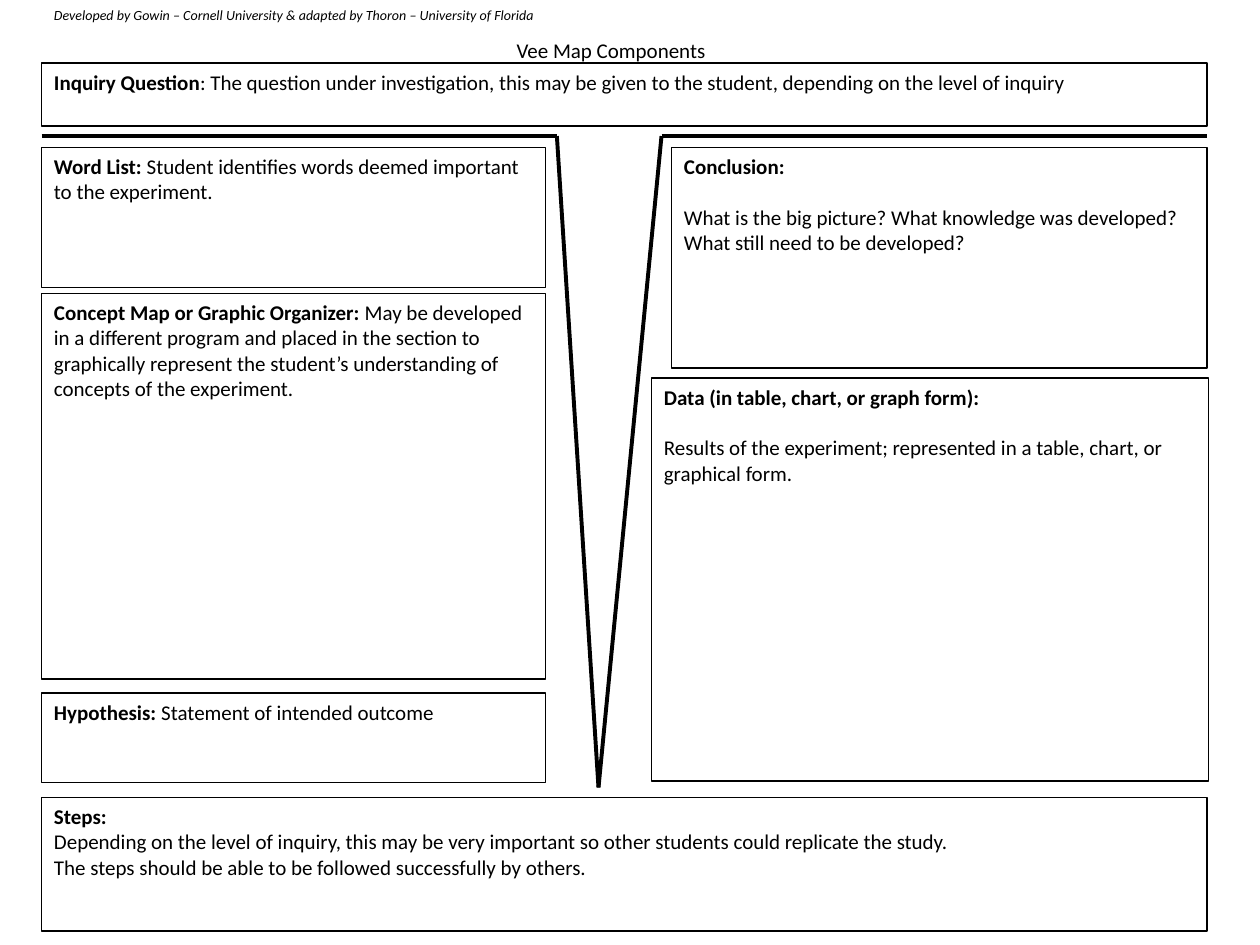
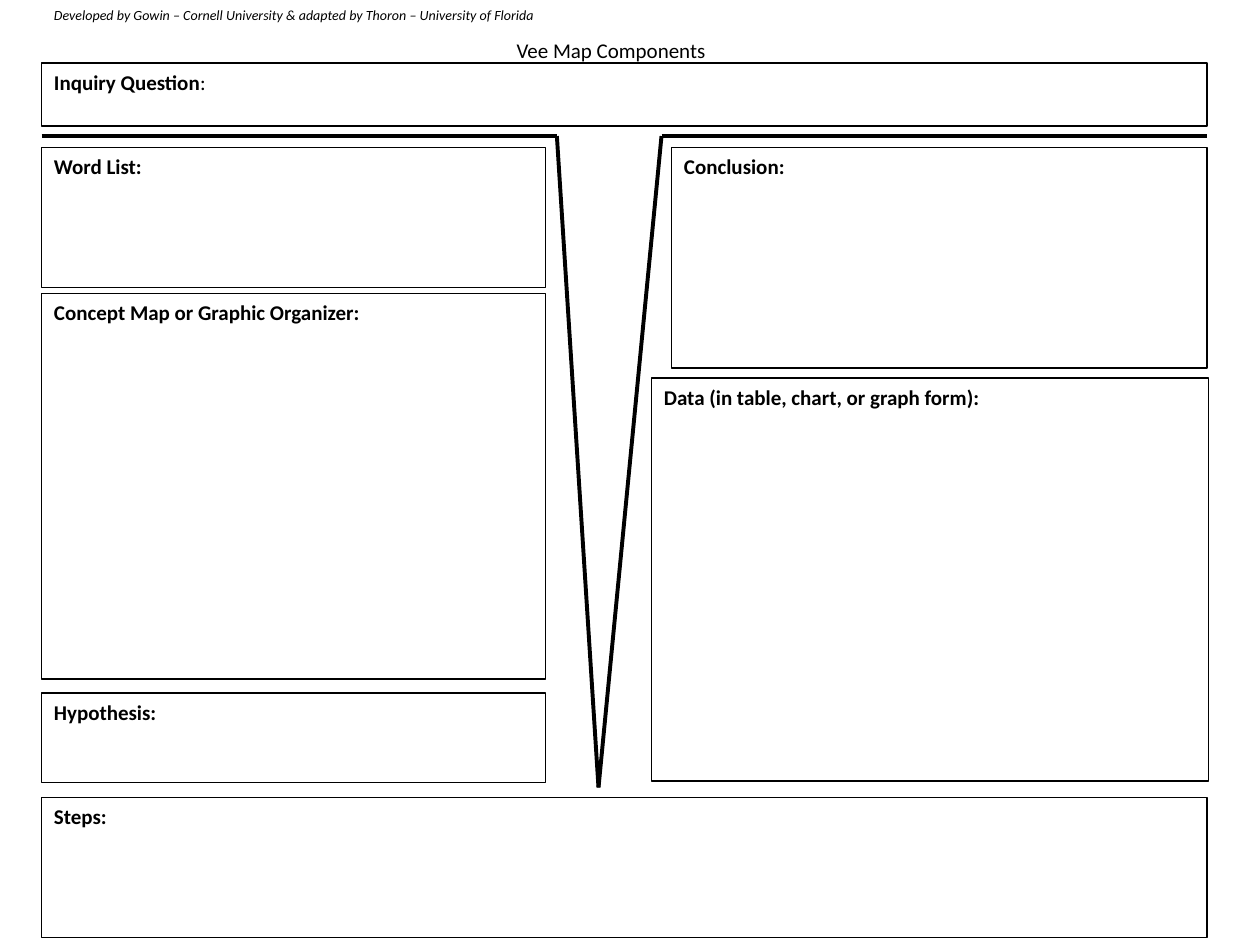
from dataclasses import dataclass
from itertools import pairwise

from lxml.etree import SubElement
from pptx import Presentation
from pptx.dml.color import RGBColor
from pptx.enum.shapes import MSO_CONNECTOR, MSO_SHAPE
from pptx.enum.text import MSO_ANCHOR, MSO_AUTO_SIZE, PP_ALIGN
from pptx.oxml.ns import qn
from pptx.util import Inches, Pt


@dataclass(frozen=True)
class Theme:
    font: str = "Calibri"
    ink: RGBColor = RGBColor(0, 0, 0)
    body: float = 12
    credit: float = 8
    gap: float = 14.6  # one line of body text
    border: float = 0.75
    vee: float = 2.25


THEME = Theme()
LEFT, RIGHT = 0.33, 9.58
TOP = 1.17
FULL = RIGHT - LEFT
COLUMN = 4

TITLE = "Vee Map Components"
CREDIT = ("Developed by Gowin – Cornell University & adapted by "
          "Thoron – University of Florida")

# The vee, from the left edge down to the tip and out to the right edge
VEE = [(LEFT, 1.08), (4.42, 1.08), (4.75, 6.25), (5.25, 1.08), (RIGHT, 1.08)]

# Panel: heading, rest of the heading line, (left, top, width, height)
PANELS = {
    "question": ("Inquiry Question", ":", (LEFT, 0.5, FULL, 0.5)),
    "words": ("Word List:", "", (LEFT, TOP, COLUMN, 1.11)),
    "concepts": ("Concept Map or Graphic Organizer:", "",
                 (LEFT, 2.33, COLUMN, 3.06)),
    "hypothesis": ("Hypothesis:", "", (LEFT, 5.5, COLUMN, 0.71)),
    "steps": ("Steps:", "", (LEFT, 6.33, FULL, 1.06)),
    "data": ("Data (in table, chart, or graph form):", "",
             (5.17, 3, 4.42, 3.2)),
    "conclusion": ("Conclusion:", "", (5.33, TOP, 4.25, 1.75)),
}

# Guidance that continues the heading line
INLINE = {
    "question": " The question under investigation, this may be given to the "
                "student, depending on the level of inquiry",
    "words": " Student identifies words deemed important to the experiment.",
    "concepts": " May be developed in a different program and placed in the "
                "section to graphically represent the student’s understanding "
                "of concepts of the experiment.",
    "hypothesis": " Statement of intended outcome",
}

# Guidance below the heading: space before it, then its paragraphs
BELOW = {
    "steps": (0, ["Depending on the level of inquiry, this may be very "
                  "important so other students could replicate the study.",
                  "The steps should be able to be followed successfully "
                  "by others."]),
    "data": (THEME.gap, ["Results of the experiment; represented in a table, "
                         "chart, or graphical form."]),
    "conclusion": (THEME.gap, ["What is the big picture? What knowledge was "
                               "developed? What still need to be developed?"]),
}


def add_run(p, text, size=THEME.body, bold=False, italic=False):
    r = p.add_run()
    r.text = text
    r.font.name, r.font.size = THEME.font, Pt(size)
    r.font.bold, r.font.italic = bold, italic
    r.font.color.rgb = THEME.ink


def prepare_text(sp):
    """Set up a top-left text frame and return its first paragraph."""
    tf = sp.text_frame
    tf.word_wrap = True
    tf.auto_size = MSO_AUTO_SIZE.NONE
    tf.vertical_anchor = MSO_ANCHOR.TOP
    p = tf.paragraphs[0]
    p.alignment = PP_ALIGN.LEFT
    return p


def add_title(slide):
    sp = slide.shapes.title
    sp.left, sp.top = Inches(4), Inches(0.25)
    sp.width, sp.height = Inches(2), Inches(0.3)
    add_run(prepare_text(sp), TITLE)


def add_credit(slide):
    sp = slide.shapes.add_textbox(Inches(LEFT), 0, Inches(4.25), Inches(0.24))
    add_run(prepare_text(sp), CREDIT, THEME.credit, italic=True)


def add_line(slide, start, end):
    points = [Inches(v) for v in (*start, *end)]
    line = slide.shapes.add_connector(MSO_CONNECTOR.STRAIGHT, *points)
    line.line.color.rgb = THEME.ink
    line.line.width = Pt(THEME.vee)
    SubElement(line._element.spPr, qn("a:effectLst"))


def add_panel(slide, box, heading, inline="", below=(0, [])):
    sp = slide.shapes.add_shape(MSO_SHAPE.RECTANGLE, *map(Inches, box))
    sp.shadow.inherit = False
    sp.fill.background()
    sp.line.color.rgb = THEME.ink
    sp.line.width = Pt(THEME.border)
    p = prepare_text(sp)
    add_run(p, heading, bold=True)
    if inline:
        add_run(p, inline)
    gap, lines = below
    for i, text in enumerate(lines):
        p = sp.text_frame.add_paragraph()
        p.alignment = PP_ALIGN.LEFT
        if i == 0 and gap:
            p.space_before = Pt(gap)
        add_run(p, text)


def add_vee_map(prs, inline, below, steps_height):
    slide = prs.slides.add_slide(prs.slide_layouts[5])
    add_title(slide)
    # Vee lines
    for start, end in pairwise(VEE):
        add_line(slide, start, end)
    # Panels around the vee
    for name, (heading, tail, box) in PANELS.items():
        if name == "steps":
            box = (*box[:3], steps_height)
        add_panel(slide, box, heading, tail + inline.get(name, ""),
                  below.get(name, (0, [])))
    add_credit(slide)


def main():
    prs = Presentation()
    prs.slide_width, prs.slide_height = Inches(10), Inches(7.5)
    # Explained map, then the blank one to fill in
    add_vee_map(prs, INLINE, BELOW, steps_height=1.06)
    add_vee_map(prs, {}, {}, steps_height=1.11)
    prs.save("out.pptx")


if __name__ == "__main__":
    main()
